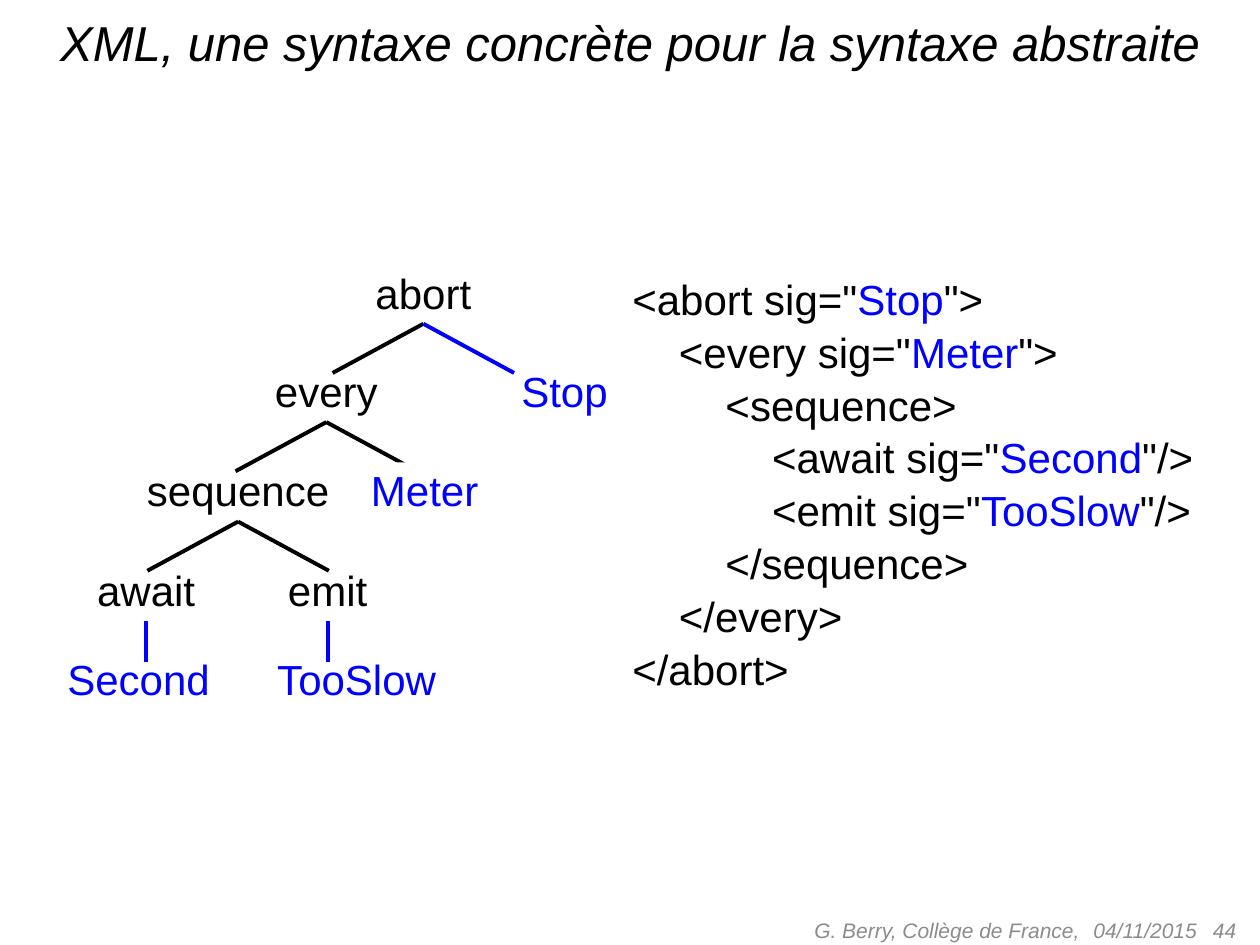
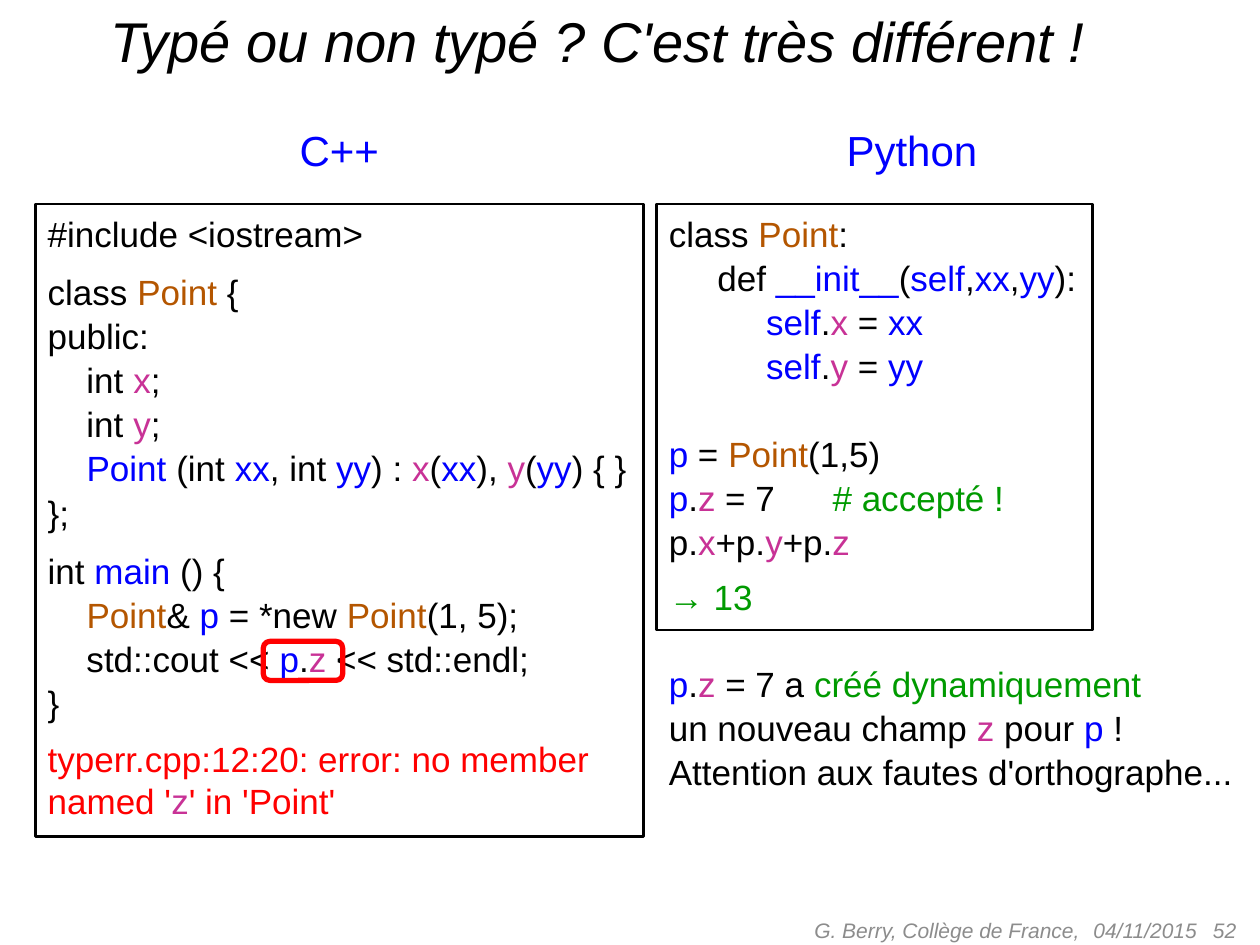
from collections import namedtuple

from lxml import etree
from pptx import Presentation
from pptx.dml.color import RGBColor
from pptx.enum import shapes, text
from pptx.oxml import ns
from pptx.util import Inches, Pt

FONT = "Arial"
BLACK, BLUE, RED, GREY = "000000", "0000FF", "FF0000", "8C8C8C"
# Keys of the colour marks: "|b" starts blue text, "|k" returns to black.
COLOURS = {"k": BLACK, "b": BLUE, "o": "B45600", "m": "C83296",
           "g": "009A00", "r": RED, "h": GREY}

Line = namedtuple("Line", "marked before spacing tab", defaults=(0, 1.05, None))
Node = namedtuple("Node", "center width row colour", defaults=(BLACK,))


def rgb(colour):
    return RGBColor.from_string(colour)


def add_run(p, content, size, colour, italic=False):
    r = p.add_run()
    r.text = content
    r.font.name, r.font.size, r.font.italic = FONT, Pt(size), italic
    r.font.color.rgb = rgb(colour)


def add_tab(p, position):
    pPr = p._p.get_or_add_pPr()
    tabs = etree.SubElement(pPr, ns.qn("a:tabLst"))
    etree.SubElement(tabs, ns.qn("a:tab"), pos=str(Inches(position)), algn="l")


def write_lines(tf, lines, size):
    """Write lines whose marks "|x" change the colour to COLOURS["x"]."""
    for i, line in enumerate(lines):
        if isinstance(line, str):
            line = Line(line)
        p = tf.paragraphs[0] if i == 0 else tf.add_paragraph()
        p.line_spacing = line.spacing
        if line.before:
            p.space_before = Pt(line.before)
        if line.tab:
            add_tab(p, line.tab)
        for part in ("k" + line.marked).split("|"):
            if part[1:]:
                add_run(p, part[1:], size, COLOURS[part[0]])


def fit_to_text(tf):
    tf.word_wrap = False
    tf.auto_size = text.MSO_AUTO_SIZE.SHAPE_TO_FIT_TEXT


def add_text(s, box, lines, size):
    tf = s.shapes.add_textbox(*map(Inches, box)).text_frame
    fit_to_text(tf)
    write_lines(tf, lines, size)


def add_box(s, box, fill=None, line=None, width=1.5, kind="RECTANGLE"):
    sp = s.shapes.add_shape(shapes.MSO_SHAPE[kind], *map(Inches, box))
    sp.shadow.inherit = False
    if fill:
        sp.fill.solid()
        sp.fill.fore_color.rgb = rgb(fill)
    else:
        sp.fill.background()
    if line:
        sp.line.color.rgb = rgb(line)
        sp.line.width = Pt(width)
    else:
        sp.line.fill.background()
    return sp


def add_title(s, box, content, size):
    sp = s.shapes.title
    sp.left, sp.top, sp.width, sp.height = map(Inches, box)
    tf = sp.text_frame
    tf.word_wrap = True
    tf.auto_size = text.MSO_AUTO_SIZE.SHAPE_TO_FIT_TEXT
    tf.vertical_anchor = text.MSO_ANCHOR.TOP
    p = tf.paragraphs[0]
    p.alignment = text.PP_ALIGN.CENTER
    add_run(p, content, size, BLACK, italic=True)


def add_footer(s, number, x=5.5, y=7.18):
    left, right = text.PP_ALIGN.LEFT, text.PP_ALIGN.RIGHT
    for dx, width, align, content in (
            (3.08, 2.33, left, "04/11/2015"),
            (2.08, 2.33, right, str(number)),
            (0, 3.17, right, "G. Berry, Collège de France,")):
        box = x + dx, y, width, 0.4
        tf = s.shapes.add_textbox(*map(Inches, box)).text_frame
        tf.word_wrap = True
        tf.vertical_anchor = text.MSO_ANCHOR.MIDDLE
        p = tf.paragraphs[0]
        p.alignment = align
        add_run(p, content, 12, GREY, italic=True)


def new_slide(prs, title_box, title, size, number):
    s = prs.slides.add_slide(prs.slide_layouts[5])
    add_title(s, title_box, title, size)
    add_footer(s, number)
    return s


def add_node(s, name, node, x, y):
    rows = (0, 0.78, 1.57, 2.36, 3.07)
    box = x + node.center - node.width / 2, y + rows[node.row], node.width, 0.47
    sp = add_box(s, box, fill="FFFFFF")
    tf = sp.text_frame
    fit_to_text(tf)
    tf.margin_left = tf.margin_right = Inches(0.1)
    tf.margin_top, tf.margin_bottom = 0, Inches(0.05)
    p = tf.paragraphs[0]
    p.alignment, p.line_spacing = text.PP_ALIGN.CENTER, 1.05
    add_run(p, name, 24, node.colour)
    return sp


def add_branch(s, parent, dx, dy, colour):
    """Draw a branch from the middle of the parent's lower side."""
    x, y = parent.left + parent.width // 2, parent.top + parent.height
    c = s.shapes.add_connector(shapes.MSO_CONNECTOR.STRAIGHT, x, y,
                               x + Inches(dx), y + Inches(dy))
    c.begin_connect(parent, 2)
    c.line.color.rgb = rgb(colour)
    c.line.width = Pt(2.25)
    etree.SubElement(c._element.spPr, ns.qn("a:effectLst"))


def add_syntax_tree(s, x, y):
    nodes = {
        "abort": Node(2.93, 0.97, 0),
        "Stop": Node(4.05, 0.89, 1, BLUE),
        "every": Node(2.16, 1.03, 1),
        "sequence": Node(1.46, 1.66, 2),
        "await": Node(0.73, 0.99, 3),
        "emit": Node(2.17, 0.85, 3),
        "Second": Node(0.67, 1.34, 4, BLUE),
        "TooSlow": Node(2.4, 1.48, 4, BLUE),
    }
    placed = {name: add_node(s, name, n, x, y) for name, n in nodes.items()}
    for name, right_colour in (("abort", BLUE), ("every", BLACK),
                               ("sequence", BLACK)):
        add_branch(s, placed[name], -0.72, 0.39, BLACK)
        add_branch(s, placed[name], 0.72, 0.39, right_colour)
    for name in ("await", "emit"):
        add_branch(s, placed[name], 0, 0.32, BLUE)
    # Placed last: its white box covers the end of the branch.
    add_node(s, "Meter", Node(2.94, 1.06, 2, BLUE), x, y)


def add_code_panel(s, heading, heading_dx, heading_width, box, lines):
    x, y = box[:2]
    add_text(s, (x + heading_dx, y - 0.7, heading_width, 0.52),
             ["|b" + heading], 24)
    sp = add_box(s, box, line=BLACK)
    tf = sp.text_frame
    fit_to_text(tf)
    tf.vertical_anchor = text.MSO_ANCHOR.TOP
    tf.margin_left = tf.margin_right = Inches(0.1)
    tf.margin_top, tf.margin_bottom = Inches(0.05), Inches(0.07)
    write_lines(tf, lines, 20)
    for p in tf.paragraphs:
        p.alignment = text.PP_ALIGN.LEFT


def build_xml_slide(prs):
    s = new_slide(prs, (0, 0.05, 10, 0.57),
                  "XML, une syntaxe concrète pour la syntaxe abstraite", 28, 44)
    add_text(s, (4.92, 2.1, 4.72, 3.49), [
        '<abort sig="|bStop|k">',
        '    <every sig="|bMeter|k">',
        '        <sequence>',
        '            <await sig="|bSecond|k"/>',
        '            <emit sig="|bTooSlow|k"/>',
        '        </sequence>',
        '    </every>',
        '</abort>',
    ], 24)
    add_syntax_tree(s, 0.43, 2.1)


def build_typing_slide(prs):
    s = new_slide(prs, (0, 0, 9.5, 0.64),
                  "Typé ou non typé ? C'est très différent !", 32, 52)
    cpp_x, python_x, y = 0.28, 5.21, 1.62
    add_code_panel(s, "C++", 2, 0.84, (cpp_x, y, 4.83, 5.02), [
        "#include <iostream>",
        Line("class |oPoint|k {", 8),
        "public:",
        "    int |mx|k;",
        "    int |my|k;",
        "    |bPoint |k(int |bxx|k, int |byy|k) : "
        "|mx|k(|bxx|k), |my|k(|byy|k) { }",
        "};",
        Line("int |bmain|k () {", 8),
        "    |oPoint|k& |bp|k = *new |oPoint|k(1, 5);",
        "    std::cout << |bp|k.|mz |k<< std::endl;",
        "}",
        Line("|rtyperr.cpp:12:20: error: no member", 8, 1.0),
        Line("|rnamed '|mz|r' in 'Point'", 0, 1.0),
    ])
    add_code_panel(s, "Python", 1.41, 1.25, (python_x, y, 3.46, 3.38), [
        "class |oPoint|k:",
        "     def |b__init__|k(|bself|k,|bxx|k,|byy|k):",
        "          |bself|k.|mx |k= |bxx",
        "          |bself|k.|my |k= |byy",
        Line("|bp|k = |oPoint|k(1,5)", 25),
        Line("|bp|k.|mz|k = 7\t|g# accepté !", tab=1.3),
        "p.|mx|k+p.|my|k+p.|mz",
        Line("|g→ 13", 6),
    ])
    add_text(s, (python_x, y + 3.57, 4.68, 1.16), [
        "|bp|k.|mz|k = 7 a |gcréé dynamiquement",
        "un nouveau champ |mz|k pour |bp |k!",
        "Attention aux fautes d'orthographe...",
    ], 20)
    add_box(s, (cpp_x + 1.81, y + 3.47, 0.63, 0.31), line=RED, width=3,
            kind="ROUNDED_RECTANGLE")


def main():
    prs = Presentation()
    prs.slide_width, prs.slide_height = Inches(10), Inches(7.5)
    build_xml_slide(prs)
    build_typing_slide(prs)
    prs.save("out.pptx")


if __name__ == "__main__":
    main()
